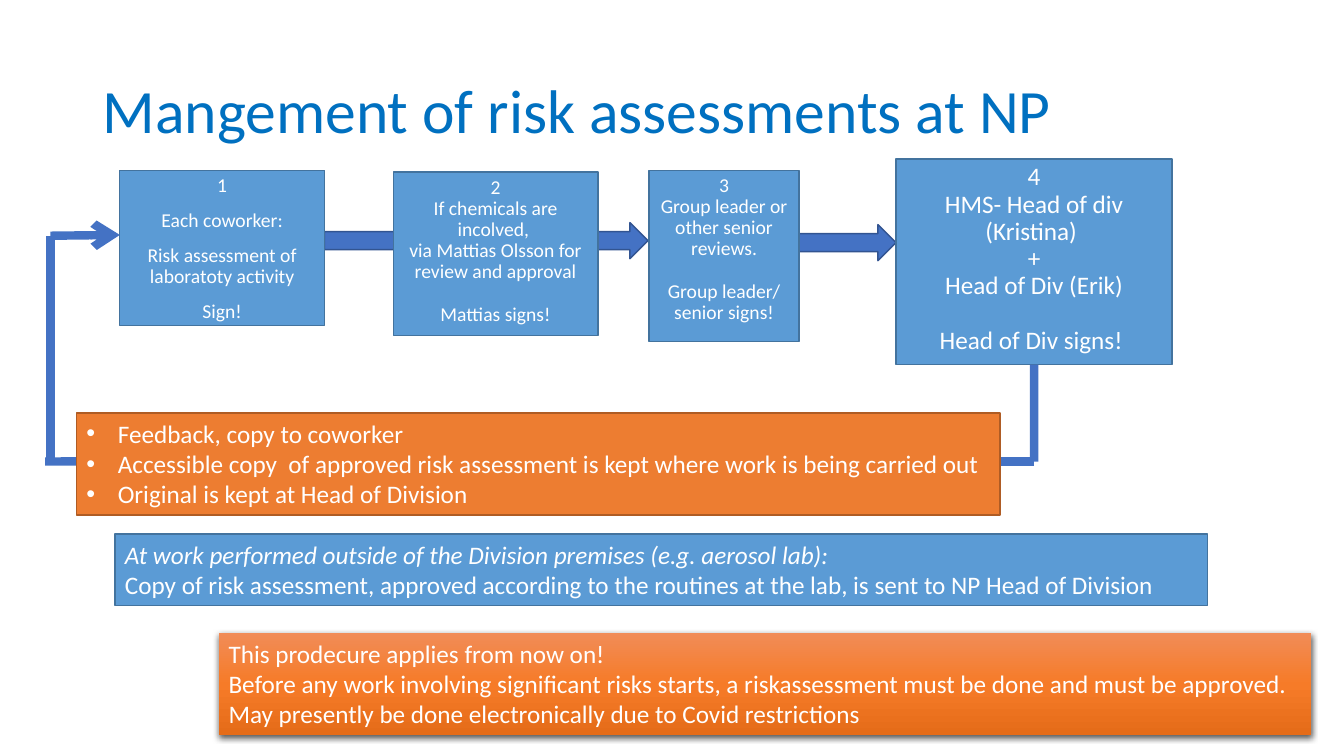
from copy import deepcopy
from dataclasses import dataclass

from lxml.etree import SubElement
from pptx import Presentation
from pptx.dml.color import RGBColor
from pptx.enum.shapes import MSO_CONNECTOR, MSO_SHAPE
from pptx.enum.text import MSO_ANCHOR, MSO_AUTO_SIZE, PP_ALIGN
from pptx.oxml.ns import qn
from pptx.util import Cm, Pt


@dataclass(frozen=True)
class Theme:
    """Colours, font and type sizes of the slide."""
    font: str = "Calibri"
    title: str = "0070C0"
    white: str = "FFFFFF"
    blue: tuple = ("5B9BD5", "43739E")
    orange: tuple = ("ED7D31", "AF5C24")
    arrow: tuple = ("4472C4", "325491")
    notice: tuple = ((0, "F18C57"), (0.5, "F67B28"), (1, "E56C19"))
    title_size: int = 44
    body_size: int = 18
    step_size: int = 14


THEME = Theme()


def rgb(value):
    """Turn a hex string into a colour."""
    return RGBColor.from_string(value)


def apply(target, values):
    """Set each attribute named in a dict of format values."""
    for name, value in values.items():
        setattr(target, name, value)


def add_paragraph(tf, text, size, color=THEME.white, font=None, para=None):
    """Write one formatted paragraph, reusing the first empty one."""
    p = tf.paragraphs[0]
    if p.runs:
        p = tf.add_paragraph()
    apply(p, {"alignment": PP_ALIGN.LEFT, **(para or {})})
    r = p.add_run()
    r.text = text
    apply(r.font, {"name": THEME.font, "size": Pt(size), **(font or {})})
    r.font.color.rgb = rgb(color)
    return p


def add_title(s, text, box):
    """Add the slide heading."""
    tf = s.shapes.add_textbox(*map(Cm, box)).text_frame
    apply(tf, {"word_wrap": True, "vertical_anchor": MSO_ANCHOR.MIDDLE})
    add_paragraph(tf, text, THEME.title_size, THEME.title, para={"line_spacing": 0.9})


def add_block(s, kind, box, colors):
    """Add a filled and outlined preset shape without shadow."""
    sp = s.shapes.add_shape(kind, *map(Cm, box))
    sp.shadow.inherit = False
    fill, line = colors
    sp.fill.solid()
    sp.fill.fore_color.rgb = rgb(fill)
    sp.line.color.rgb = rgb(line)
    sp.line.width = Pt(1)
    return sp


def add_step(s, box, groups, size, spacing=0):
    """Add a centred step box whose text groups stand one line apart."""
    sp = add_block(s, MSO_SHAPE.RECTANGLE, box, THEME.blue)
    tf = sp.text_frame
    apply(tf, {"word_wrap": True, "vertical_anchor": MSO_ANCHOR.TOP})
    for g, group in enumerate(groups):
        for i, text in enumerate(group):
            before = 1.1 * size if g and not i else spacing
            para = {"alignment": PP_ALIGN.CENTER, "line_spacing": 0.9, "space_before": Pt(before)}
            add_paragraph(tf, text, size, para=para)
    return sp


def add_panel(s, box, colors, lines, wrap=False, bullets=False, first_italic=False):
    """Add a wide box of left-aligned lines."""
    sp = add_block(s, MSO_SHAPE.RECTANGLE, box, colors)
    tf = sp.text_frame
    apply(tf, {"word_wrap": wrap, "auto_size": MSO_AUTO_SIZE.SHAPE_TO_FIT_TEXT,
               "vertical_anchor": MSO_ANCHOR.TOP})
    for i, text in enumerate(lines):
        italic = first_italic and i == 0
        p = add_paragraph(tf, text, THEME.body_size, font={"italic": italic})
        if bullets:
            add_bullet(p)
    return sp


def add_bullet(p):
    """Give a paragraph a hanging round bullet."""
    indent = Cm(0.79)
    pPr = p._p.get_or_add_pPr()
    pPr.set("marL", str(indent))
    pPr.set("indent", str(-indent))
    SubElement(pPr, qn("a:buFont"), typeface="Arial")
    SubElement(pPr, qn("a:buChar"), char="•")


def add_glow(sp, stops):
    """Give a shape a vertical gradient, a soft shadow and no outline."""
    sp.line.fill.background()
    sp.fill.gradient()
    sp.fill.gradient_angle = 270
    spPr = sp._element.spPr
    gs_list = spPr.find(qn("a:gradFill")).find(qn("a:gsLst"))
    gs_list.append(deepcopy(gs_list[0]))
    for stop, (position, color) in zip(sp.fill.gradient_stops, stops):
        stop.position = position
        stop.color.rgb = rgb(color)
    shadow = SubElement(spPr.find(qn("a:effectLst")), qn("a:outerShdw"),
                        blurRad=str(Pt(4.5)), dist=str(Pt(1.5)), dir="5400000",
                        algn="ctr", rotWithShape="0")
    color = SubElement(shadow, qn("a:srgbClr"), val="000000")
    SubElement(color, qn("a:alpha"), val="63000")


def add_line(s, start, end, head=False):
    """Add a thick straight line, optionally with an arrowhead at its end."""
    c = s.shapes.add_connector(MSO_CONNECTOR.STRAIGHT, *map(Cm, start + end))
    c.line.color.rgb = rgb(THEME.arrow[0])
    c.line.width = Pt(6)
    if head:
        SubElement(c.line._get_or_add_ln(), qn("a:tailEnd"), type="arrow")
    SubElement(c._element.spPr, qn("a:effectLst"))
    return c


def main():
    """Build the slide and save it."""
    prs = Presentation()
    apply(prs, {"slide_width": Cm(33.87), "slide_height": Cm(19.05)})
    s = prs.slides.add_slide(prs.slide_layouts[6])

    add_title(s, "Mangement of risk assessments at NP", (2.34, 1.02, 29.21, 3.68))

    for box in ((8.18, 5.61, 8.15, 0.91), (20.14, 5.66, 2.44, 0.91)):
        add_block(s, MSO_SHAPE.RIGHT_ARROW, box, THEME.arrow)

    add_step(s, (3.02, 4.29, 5.16, 3.91),
             [["1", "Each coworker:", "Risk assessment of laboratoty activity", "Sign!"]],
             THEME.step_size, spacing=10)
    add_step(s, (9.91, 4.34, 5.16, 4.11),
             [["2", "If chemicals are incolved, ", "via Mattias Olsson for review and approval"],
              ["Mattias signs!"]], THEME.step_size)
    add_step(s, (16.36, 4.29, 3.78, 4.32),
             [["3", "Group leader or other senior reviews."], ["Group leader/ senior signs!"]],
             THEME.step_size)
    head_step = add_step(s, (22.58, 4.01, 6.96, 5.18),
                         [["4", "HMS- Head of div (Kristina) ", "+", "Head of Div (Erik)"],
                          ["Head of Div signs! "]], THEME.body_size)

    add_line(s, (1.27, 11.58), (1.27, 5.94))
    add_line(s, (1.27, 5.94), (3.02, 5.92), head=True)
    add_line(s, (26.06, 11.63), (26.06, 9.19)).end_connect(head_step, 2)
    add_line(s, (26.06, 11.63), (20.68, 11.63))
    add_line(s, (10.9, 11.58), (1.14, 11.63))

    add_panel(s, (1.93, 10.41, 23.27, 2.57), THEME.orange,
              ["Feedback, copy to coworker",
               "Accessible copy  of approved risk assessment is kept where work is being carried out",
               "Original is kept at Head of Division"], bullets=True)
    notice = add_panel(s, (5.51, 15.95, 27.53, 2.57), THEME.orange,
                       ["This prodecure applies from now on!",
                        "Before any work involving significant risks starts, "
                        "a riskassessment must be done and must be approved.",
                        "May presently be done electronically due to Covid restrictions"])
    add_glow(notice, THEME.notice)
    add_panel(s, (2.9, 13.46, 27.53, 1.8), THEME.blue,
              ["At work performed outside of the Division premises (e.g. aerosol lab):",
               "Copy of risk assessment, approved according to the routines at the lab, "
               "is sent to NP Head of Division"], wrap=True, first_italic=True)

    prs.save("out.pptx")


if __name__ == "__main__":
    main()
